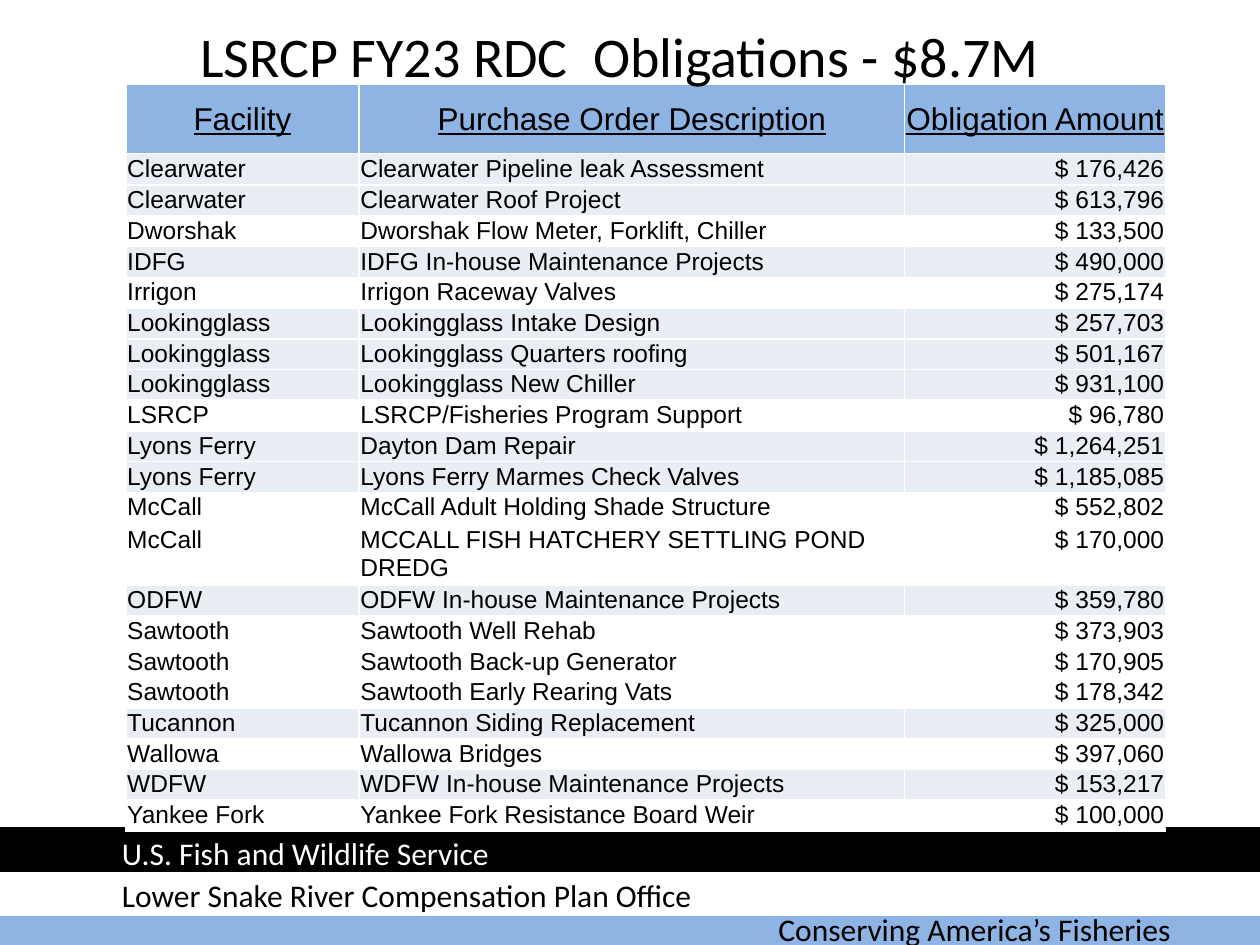
import itertools

import pptx
import pptx.dml.color
import pptx.enum.shapes
import pptx.enum.text
import pptx.oxml
import pptx.oxml.ns
import pptx.util

Inches = pptx.util.Inches
ALIGN = pptx.enum.text.PP_ALIGN
MIDDLE = pptx.enum.text.MSO_ANCHOR.MIDDLE
TOP = pptx.enum.text.MSO_ANCHOR.TOP

BLUE, PALE, WHITE, BLACK = "8EB4E3", "E9EDF4", "FFFFFF", "000000"

HEADS = ["Facility", "Purchase Order Description", "Obligation Amount"]
ORDERS = [
    ("Clearwater", "Clearwater Pipeline leak Assessment", 176426),
    ("Clearwater", "Clearwater Roof Project", 613796),
    ("Dworshak", "Dworshak Flow Meter, Forklift, Chiller", 133500),
    ("IDFG", "IDFG In-house Maintenance Projects", 490000),
    ("Irrigon", "Irrigon Raceway Valves", 275174),
    ("Lookingglass", "Lookingglass Intake Design", 257703),
    ("Lookingglass", "Lookingglass Quarters roofing", 501167),
    ("Lookingglass", "Lookingglass New Chiller", 931100),
    ("LSRCP", "LSRCP/Fisheries Program Support", 96780),
    ("Lyons Ferry", "Dayton Dam Repair", 1264251),
    ("Lyons Ferry", "Lyons Ferry Marmes Check Valves", 1185085),
    ("McCall", "McCall Adult Holding Shade Structure", 552802),
    ("McCall", "MCCALL FISH HATCHERY SETTLING POND DREDG", 170000),
    ("ODFW", "ODFW In-house Maintenance Projects", 359780),
    ("Sawtooth", "Sawtooth Well Rehab", 373903),
    ("Sawtooth", "Sawtooth Back-up Generator", 170905),
    ("Sawtooth", "Sawtooth Early Rearing Vats", 178342),
    ("Tucannon", "Tucannon Siding Replacement", 325000),
    ("Wallowa", "Wallowa Bridges", 397060),
    ("WDFW", "WDFW In-house Maintenance Projects", 153217),
    ("Yankee Fork", "Yankee Fork Resistance Board Weir", 100000),
]
WIDTHS = [1.85, 4.33, 2.07]
HEIGHTS = [0.55, 0.25] + [0.23] * 11 + [0.39] + [0.23] * 7 + [0.22]
HEIGHTS[13 - 1] = 0.26  # row above the two-line order
ALIGNS = [ALIGN.LEFT, ALIGN.LEFT, ALIGN.RIGHT]


def color(code):
    return pptx.dml.color.RGBColor.from_string(code)


def style(para, size, code, name, align=ALIGN.LEFT, **more):
    para.alignment = align
    look = {"size": pptx.util.Pt(size), "name": name, **more}
    for key, value in look.items():
        setattr(para.font, key, value)
    para.font.color.rgb = color(code)


def add_bar(slide, box, code):
    bar = slide.shapes.add_shape(
        pptx.enum.shapes.MSO_SHAPE.RECTANGLE, *map(Inches, box))
    bar.shadow.inherit = False
    bar.fill.solid()
    bar.fill.fore_color.rgb = color(code)
    bar.line.color.rgb = color(code)
    bar.line.width = pptx.util.Pt(2)


def add_label(slide, box, text, code):
    frame = slide.shapes.add_textbox(*map(Inches, box)).text_frame
    frame.word_wrap = True
    frame.auto_size = pptx.enum.text.MSO_AUTO_SIZE.SHAPE_TO_FIT_TEXT
    frame.text = text
    style(frame.paragraphs[0], 18, code, "Calibri")


def add_footer(slide, left, top, width):
    # Bands, from the bottom up
    for shift, drop, code in [(-0.01, 0.59, BLUE), (0, 0.35, WHITE), (0, 0, BLACK)]:
        add_bar(slide, (left + shift, top + drop, width, 0.33), code)
    # Names on the bands
    labels = [
        (6.08, 0.59, 3.67, "Conserving America’s Fisheries", BLACK),
        (0.87, -0.01, 4.16, "U.S. Fish and Wildlife Service", WHITE),
        (0.87, 0.32, 4.97, "Lower Snake River Compensation Plan Office", BLACK),
    ]
    for shift, drop, wide, text, code in labels:
        add_label(slide, (left + shift, top + drop, wide, 0.4), text, code)


def add_edges(cell, code):
    props = cell._tc.get_or_add_tcPr()
    for spot, side in enumerate("LRTB"):
        props.insert(spot, pptx.oxml.parse_xml(
            f'<a:ln{side} {pptx.oxml.ns.nsdecls("a")} w="12700"><a:solidFill>'
            f'<a:srgbClr val="{code}"/></a:solidFill></a:ln{side}>'))


def fill_cell(cell, text, fill, anchor, **look):
    cell.text = text
    small = Inches(0.01)
    form = {"margin_left": small, "margin_top": small, "margin_right": small,
            "margin_bottom": 0, "vertical_anchor": anchor}
    for key, value in form.items():
        setattr(cell, key, value)
    cell.fill.solid()
    cell.fill.fore_color.rgb = color(fill)
    add_edges(cell, WHITE)
    style(cell.text_frame.paragraphs[0], code=BLACK, name="Arial", **look)


def add_orders(slide, box):
    table = slide.shapes.add_table(
        len(ORDERS) + 1, len(HEADS), *map(Inches, box)).table
    for col, width in zip(table.columns, WIDTHS):
        col.width = Inches(width)
    for row, height in zip(table.rows, HEIGHTS):
        row.height = Inches(height)
    # Header
    for col, head in enumerate(HEADS):
        fill_cell(table.cell(0, col), head, BLUE, MIDDLE,
                  size=18, align=ALIGN.CENTER, underline=True)
    # Shade changes with each facility
    line = itertools.count(1)
    groups = itertools.groupby(ORDERS, key=lambda order: order[0])
    for (_, group), fill in zip(groups, itertools.cycle([PALE, WHITE])):
        for place, job, cost in group:
            row = next(line)
            for col, text in enumerate([place, job, f"$ {cost:,}"]):
                fill_cell(table.cell(row, col), text, fill, TOP,
                          size=14, align=ALIGNS[col])


def set_title(slide, box, text):
    title = slide.shapes.title
    for key, value in zip(("left", "top", "width", "height"), box):
        setattr(title, key, Inches(value))
    frame = title.text_frame
    frame.text = text
    frame.vertical_anchor = MIDDLE
    style(frame.paragraphs[0], 32, BLACK, "Calibri", ALIGN.CENTER)
    # Bring the title in front of the table
    slide.shapes._spTree.append(title._element)


def main():
    deck = pptx.Presentation()
    deck.slide_width, deck.slide_height = Inches(10), Inches(7.5)
    slide = deck.slides.add_slide(deck.slide_layouts[5])
    add_footer(slide, 0, 6.58, 10)
    add_orders(slide, (1, 0.67, 8.25, 5.82))
    set_title(slide, (0.42, 0, 9, 0.87), "LSRCP FY23 RDC  Obligations - $8.7M")
    deck.save("out.pptx")


if __name__ == "__main__":
    main()
